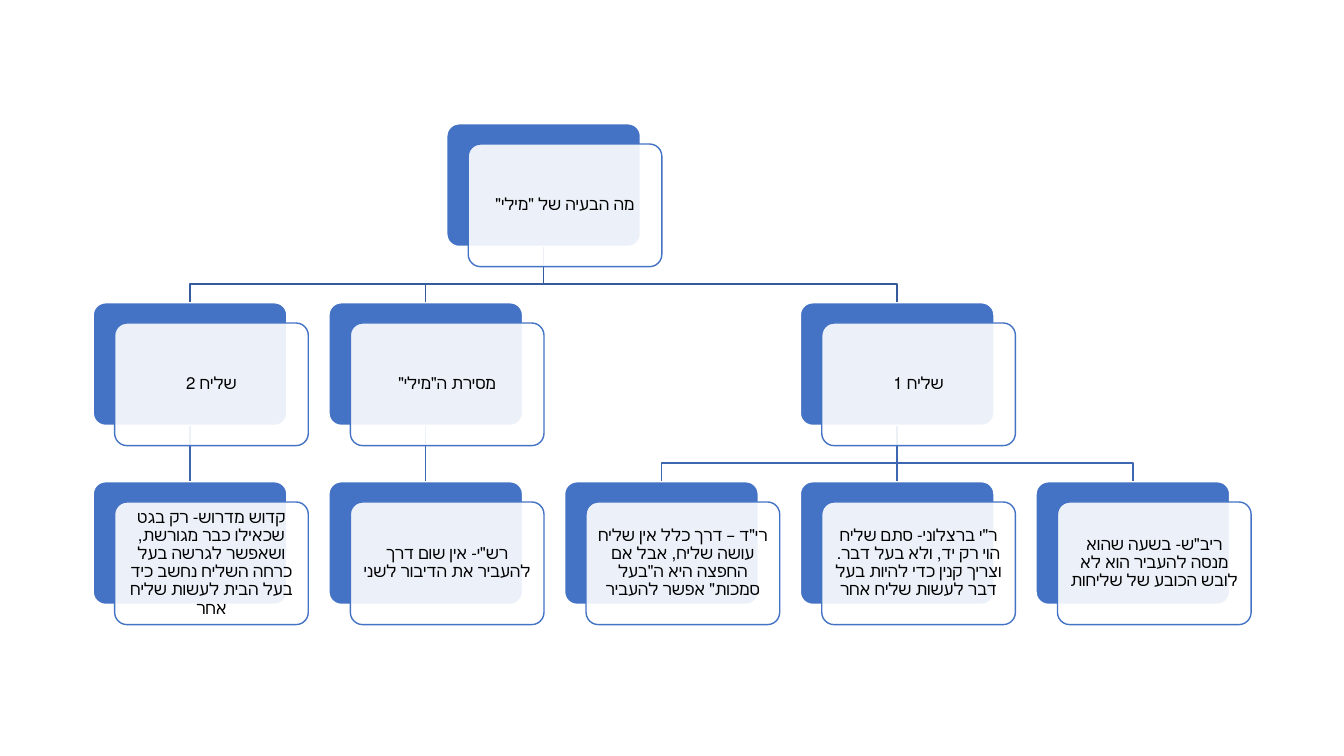
from lxml.etree import SubElement as Sub
from pptx import Presentation
from pptx.dml.color import RGBColor
from pptx.enum.shapes import MSO_SHAPE as Shape
from pptx.enum.text import MSO_ANCHOR as Anchor, PP_ALIGN as Align
from pptx.oxml.ns import qn
from pptx.util import Cm, Pt

BLUE = RGBColor(0x44, 0x72, 0xC4)
WHITE = RGBColor(0xFF, 0xFF, 0xFF)
BLACK = RGBColor(0, 0, 0)
LINKS = [RGBColor(0x36, 0x5B, 0x9D), RGBColor(0x3E, 0x67, 0xB2)]
FONT = "Calibri"

WIDE, HIGH = Cm(4.88), Cm(3.09)
STEP, DROP = Cm(5.94), Cm(4.51)
SHIFT, DIP = Cm(0.54), Cm(0.51)
PAD = Cm(0.13)

ROOT = (1.5, 'מה הבעיה של "מילי"', [
    (3, "שליח 1", [
        (4, 'ריב"ש- בשעה שהוא מנסה להעביר הוא לא לובש הכובע של שליחות', []),
        (3, 'ר"י ברצלוני- סתם שליח הוי רק יד, ולא בעל דבר. '
            'וצריך קנין כדי להיות בעל דבר לעשות שליח אחר', []),
        (2, 'רי"ד – דרך כלל אין שליח עושה שליח, אבל אם החפצה היא '
            'ה"בעל סמכות" אפשר להעביר', []),
    ]),
    (1, 'מסירת ה"מילי"', [
        (1, 'רש"י- אין שום דרך להעביר את הדיבור לשני', []),
    ]),
    (0, "שליח 2", [
        (0, "קדוש מדרוש- רק בגט שכאילו כבר מגורשת, ושאפשר לגרשה בעל "
            "כרחה השליח נחשב כיד בעל הבית לעשות שליח אחר", []),
    ]),
])


def spot(box, col, row):
    return int(box[0] + col * STEP), int(box[1] + row * DROP)


def add_link(slide, start, end, color):
    x, y = start[0] + WIDE // 2, start[1] + HIGH
    to, foot = end[0] + WIDE // 2, end[1]
    if x == to:
        pen = slide.shapes.build_freeform(x - PAD, y)
        pen.move_to(x, y)
        pen.add_line_segments([(x, foot)], close=False)
        pen.move_to(x + PAD, foot)
    else:
        bend = y + (foot - y) * 2 // 3
        pen = slide.shapes.build_freeform(x, y)
        pen.add_line_segments([(x, bend), (to, bend), (to, foot)], close=False)
    link = pen.convert_to_shape()
    link.fill.background()
    link.shadow.inherit = False
    link.line.color.rgb = color
    link.line.width = Pt(1)


def add_card(slide, x, y, fill, edge):
    card = slide.shapes.add_shape(Shape.ROUNDED_RECTANGLE, x, y, WIDE, HIGH)
    card.adjustments[0] = 0.1
    card.shadow.inherit = False
    card.fill.solid()
    card.fill.fore_color.rgb = fill
    card.line.color.rgb = edge
    card.line.width = Pt(1)
    return card


def add_text(card, text):
    frame = card.text_frame
    frame.word_wrap = True
    frame.vertical_anchor = Anchor.MIDDLE
    frame.margin_left = frame.margin_right = PAD
    frame.margin_top = frame.margin_bottom = PAD
    para = frame.paragraphs[0]
    para.text = text
    para.alignment = Align.CENTER
    para.line_spacing = 0.9
    para.space_after = Pt(4.2)
    para._p.get_or_add_pPr().set("rtl", "1")
    font = para.font
    font.size = Pt(12)
    font.color.rgb = BLACK
    font.name = FONT


def add_node(slide, place, text):
    x, y = place
    add_card(slide, x, y, BLUE, WHITE)
    front = add_card(slide, x + SHIFT, y + DIP, WHITE, BLUE)
    tint = front._element.spPr.find(qn("a:solidFill"))[0]
    Sub(tint, qn("a:alpha"), val="90000")
    add_text(front, text)


def add_links(slide, box, node, row=0):
    col, _, kids = node
    for kid in kids:
        add_link(slide, spot(box, col, row), spot(box, kid[0], row + 1), LINKS[row])
        add_links(slide, box, kid, row + 1)


def add_nodes(slide, box, node, row=0):
    col, text, kids = node
    add_node(slide, spot(box, col, row), text)
    for kid in kids:
        add_nodes(slide, box, kid, row + 1)


def add_tree(slide, box):
    add_links(slide, box, ROOT)
    add_nodes(slide, box, ROOT)


def main():
    deck = Presentation()
    deck.slide_width, deck.slide_height = Cm(33.87), Cm(19.05)
    slide = deck.slides.add_slide(deck.slide_layouts[6])
    add_tree(slide, (Cm(2.35), Cm(3.12)))
    deck.save("out.pptx")


if __name__ == "__main__":
    main()
